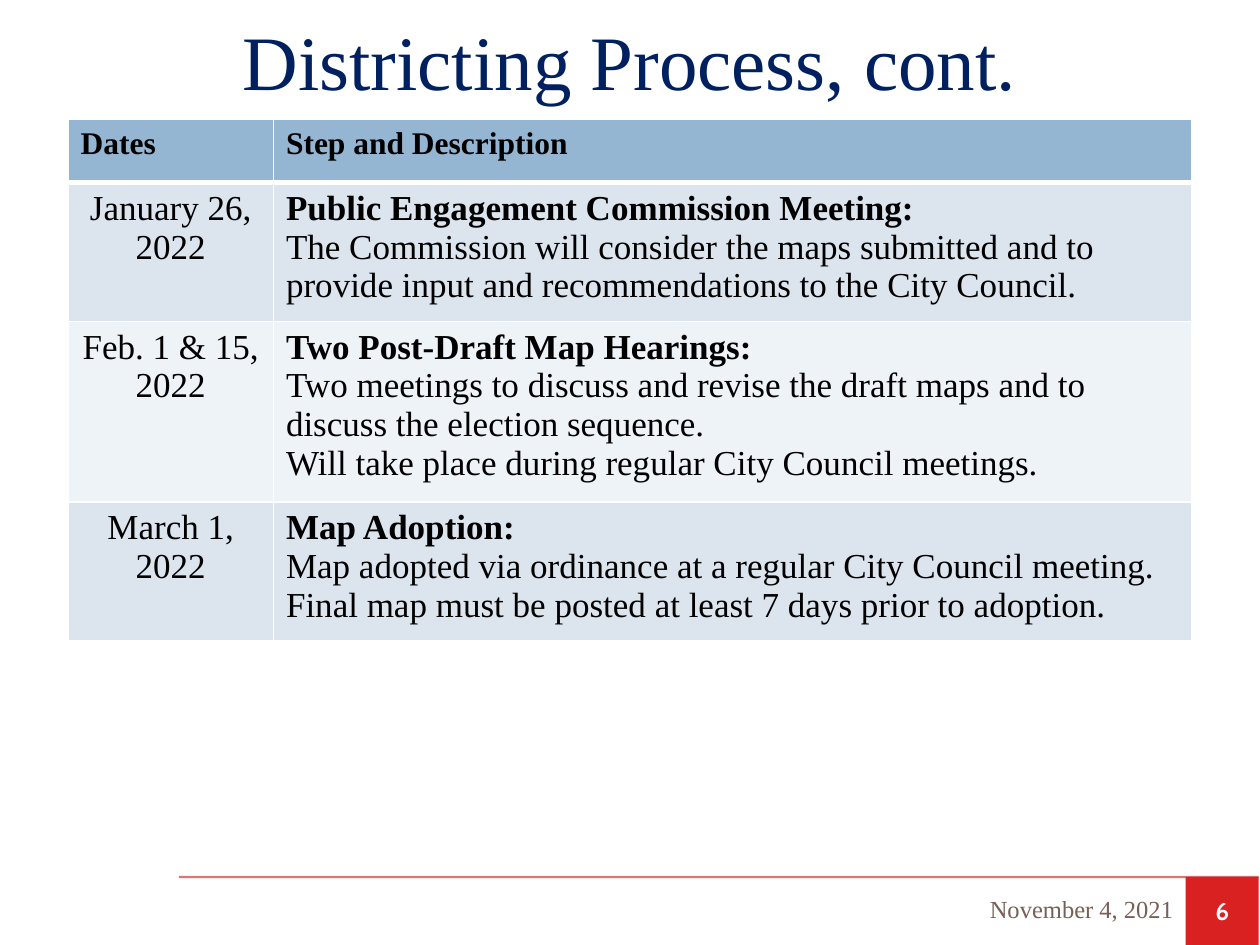
from lxml.etree import SubElement
from pptx import Presentation
from pptx.dml.color import RGBColor
from pptx.enum.shapes import MSO_CONNECTOR, MSO_SHAPE
from pptx.enum.text import MSO_ANCHOR as Anchor, PP_ALIGN as Align
from pptx.oxml.ns import qn
from pptx.util import Inches, Pt

WHITE = RGBColor(0xFF, 0xFF, 0xFF)
BLACK = RGBColor(0, 0, 0)
NAVY = RGBColor(0x00, 0x20, 0x60)
BROWN = RGBColor(0x77, 0x5F, 0x55)
RED = RGBColor(0xD9, 0x21, 0x21)
RULE_RED = RGBColor(0xC8, 0, 0)
HEADER_BLUE = RGBColor(0x94, 0xB6, 0xD2)
BANDS = [RGBColor(0xDC, 0xE5, 0xEE), RGBColor(0xEE, 0xF3, 0xF7)]
SERIF = "Times New Roman"

TITLE = "Districting Process, cont."
FOOTER_DATE = "November 4, 2021"
PAGE = "6"
HEADINGS = ["Dates", "Step and Description"]
STEPS = [
    ("January 26, 2022", "Public Engagement Commission Meeting:", [
        "The Commission will consider the maps submitted and to provide input "
        "and recommendations to the City Council."]),
    ("Feb. 1 & 15, 2022", "Two Post-Draft Map Hearings:", [
        "Two meetings to discuss and revise the draft maps and to discuss the "
        "election sequence.",
        "Will take place during regular City Council meetings."]),
    ("March 1, 2022", "Map Adoption:", [
        "Map adopted via ordinance at a regular City Council meeting.",
        "Final map must be posted at least 7 days prior to adoption."]),
]

SLIDE_W, SLIDE_H = 10, 7.5
COLUMNS = [1.63, 7.29]
ROWS = [0.5, 0.43, 0.97, 0.75]
TABLE_TOP, TABLE_H = 0.95, 4.13
RULE_LEFT, RULE_RIGHT, RULE_Y = 1.42, 9.99, 6.96
PAGE_W = 0.58
DATE_W = 2.92


def write(frame, lines, size, color, align=Align.LEFT, font=SERIF):
    for i, (text, bold) in enumerate(lines):
        paragraph = frame.paragraphs[0] if i == 0 else frame.add_paragraph()
        paragraph.alignment = align
        run = paragraph.add_run()
        run.text = text
        run.font.name, run.font.size, run.font.bold = font, Pt(size), bold
        run.font.color.rgb = color


def add_label(slide, box, text, size, color, align):
    frame = slide.shapes.add_textbox(*map(Inches, box)).text_frame
    frame.word_wrap = True
    frame.vertical_anchor = Anchor.MIDDLE
    write(frame, [(text, False)], size, color, align)


def style_cell(cell, fill, bottom=1):
    properties = cell._tc.get_or_add_tcPr()
    for side, width in (("L", 1), ("R", 1), ("T", 1), ("B", bottom)):
        border = SubElement(properties, qn(f"a:ln{side}"), w=str(Pt(width)))
        solid = SubElement(border, qn("a:solidFill"))
        SubElement(solid, qn("a:srgbClr"), val=str(WHITE))
    cell.fill.solid()
    cell.fill.fore_color.rgb = fill


def add_schedule(slide):
    width = sum(COLUMNS)
    holder = slide.shapes.add_table(
        len(ROWS), len(COLUMNS), Inches((SLIDE_W - width) / 2),
        Inches(TABLE_TOP), Inches(width), Inches(TABLE_H))
    table = holder.table
    for column, size in zip(table.columns, COLUMNS):
        column.width = Inches(size)
    for row, size in zip(table.rows, ROWS):
        row.height = Inches(size)
    holder.height = Inches(TABLE_H)

    for c, heading in enumerate(HEADINGS):
        cell = table.cell(0, c)
        style_cell(cell, HEADER_BLUE, bottom=3)
        write(cell.text_frame, [(heading, True)], 18, BLACK)
    for r, (date, step, details) in enumerate(STEPS, 1):
        when, what = table.cell(r, 0), table.cell(r, 1)
        for cell in (when, what):
            style_cell(cell, BANDS[(r - 1) % 2], bottom=1)
        write(when.text_frame, [(date, False)], 20, BLACK, Align.CENTER)
        description = [(step, True)] + [(line, False) for line in details]
        write(what.text_frame, description, 20, BLACK)


def add_footer(slide):
    rule = slide.shapes.add_connector(
        MSO_CONNECTOR.STRAIGHT,
        *map(Inches, (RULE_LEFT, RULE_Y, RULE_RIGHT, RULE_Y)))
    rule.line.width = Pt(1.25)
    rule.line.color.rgb = RULE_RED
    tint = rule._element.spPr.find(".//" + qn("a:srgbClr"))
    SubElement(tint, qn("a:alpha"), val="55000")
    SubElement(rule._element.spPr, qn("a:effectLst"))

    page_left = RULE_RIGHT - PAGE_W
    badge = slide.shapes.add_shape(
        MSO_SHAPE.RECTANGLE,
        *map(Inches, (page_left, RULE_Y, PAGE_W, SLIDE_H - RULE_Y)))
    badge.shadow.inherit = False
    badge.fill.solid()
    badge.fill.fore_color.rgb = RED
    badge.line.fill.background()
    badge.text_frame.vertical_anchor = Anchor.MIDDLE
    write(badge.text_frame, [(PAGE, True)], 14, WHITE, Align.CENTER, "Cabin")
    add_label(slide, (page_left - DATE_W, RULE_Y + 0.05, DATE_W, 0.4),
              FOOTER_DATE, 14, BROWN, Align.RIGHT)


def main():
    deck = Presentation()
    deck.slide_width, deck.slide_height = Inches(SLIDE_W), Inches(SLIDE_H)
    slide = deck.slides.add_slide(deck.slide_layouts[6])
    add_footer(slide)
    add_label(slide, (0.01, 0, SLIDE_W - 0.02, TABLE_TOP),
              TITLE, 44, NAVY, Align.CENTER)
    add_schedule(slide)
    deck.save("out.pptx")


if __name__ == "__main__":
    main()
